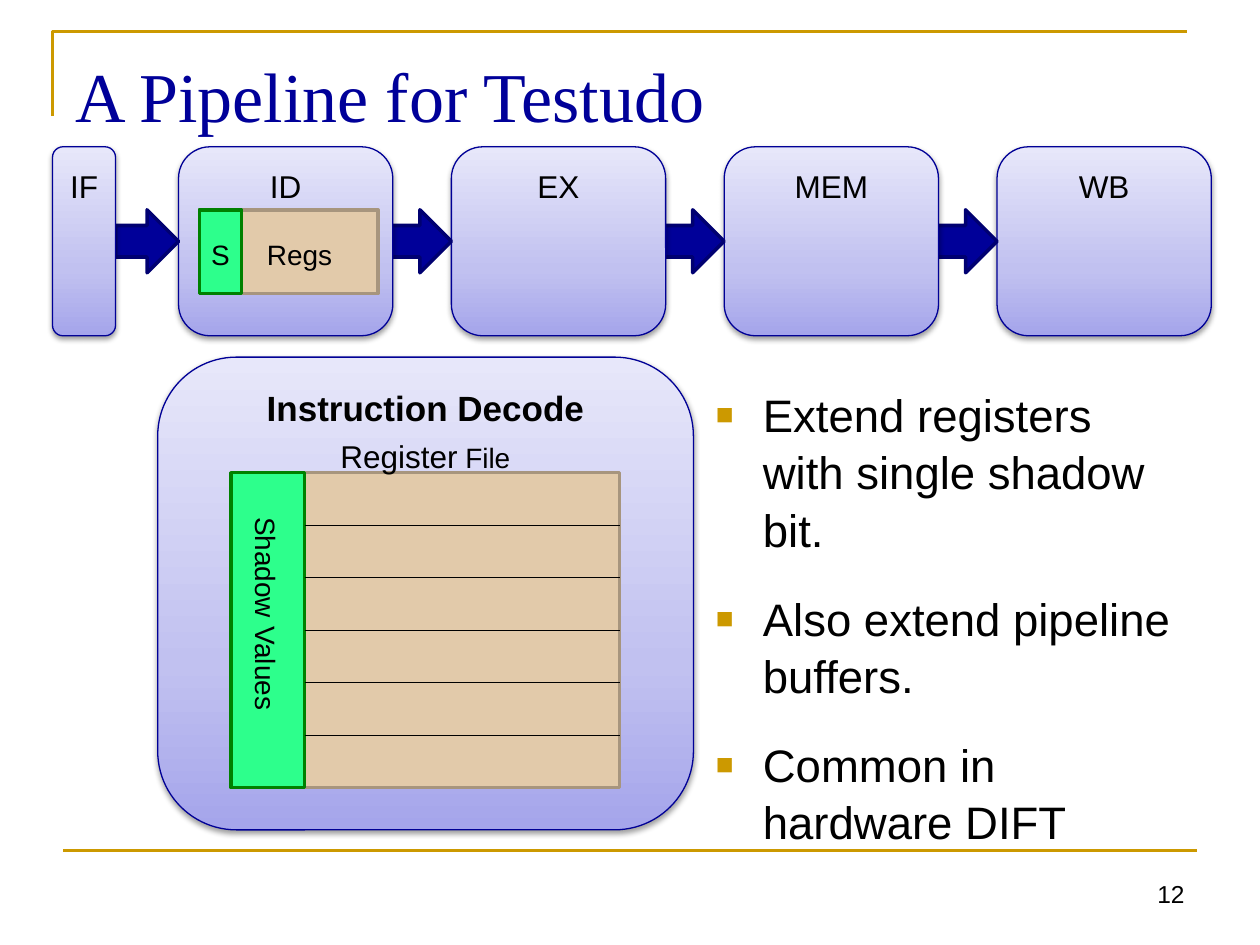
from dataclasses import dataclass

from lxml import etree
from pptx import Presentation
from pptx.dml.color import RGBColor
from pptx.enum import shapes, text
from pptx.oxml import parse_xml
from pptx.oxml.ns import nsdecls, qn
from pptx.util import Cm, Pt

KIND = shapes.MSO_SHAPE
ALIGN = text.PP_ALIGN
ANCHOR = text.MSO_ANCHOR


@dataclass(frozen=True)
class Theme:
    ink: str = "000000"
    navy: str = "000099"
    edge: str = "000096"
    deep: str = "000071"
    gold: str = "CC9900"
    tan: str = "E2CAAA"
    brown: str = "A7957E"
    mint: str = "2DFF8C"
    green: str = "008000"
    fade: tuple = ((0, "A5A5EB"), (35, "C1C1F0"), (100, "E7E7FA"))
    sans: str = "Arial"
    serif: str = "Times New Roman"
    title: int = 40
    body: int = 26
    head: int = 20
    label: int = 18
    small: int = 16
    page: int = 14


class Deck:
    def __init__(self, theme):
        self.t = theme
        self.prs = Presentation()
        self.prs.slide_width, self.prs.slide_height = Cm(25.4), Cm(19.05)
        self.slide = self.prs.slides.add_slide(self.prs.slide_layouts[6])
        self.shapes = self.slide.shapes

    def font(self, para, size, color=None, name=None, bold=False):
        f = para.font
        f.size, f.name, f.bold = Pt(size), name or self.t.sans, bold
        f.color.rgb = RGBColor.from_string(color or self.t.ink)

    def line(self, x1, y1, x2, y2, color, width):
        c = self.shapes.add_connector(
            shapes.MSO_CONNECTOR.STRAIGHT, Cm(x1), Cm(y1), Cm(x2), Cm(y2))
        c.line.color.rgb = RGBColor.from_string(color)
        c.line.width = Pt(width)
        etree.SubElement(c._element.spPr, qn("a:effectLst"))

    def corner(self, x, y, w, h):
        """Open angle that frames the title from the top left."""
        b = self.shapes.build_freeform(Cm(x), Cm(y + h))
        b.add_line_segments([(Cm(x), Cm(y)), (Cm(x + w), Cm(y))], close=False)
        s = b.convert_to_shape()
        s.shadow.inherit = False
        s.fill.background()
        s.line.color.rgb = RGBColor.from_string(self.t.gold)
        s.line.width = Pt(1.5)

    def shape(self, kind, x, y, w, h, fill, edge, width=2):
        s = self.shapes.add_shape(kind, Cm(x), Cm(y), Cm(w), Cm(h))
        s.shadow.inherit = False
        if fill:
            s.fill.solid()
            s.fill.fore_color.rgb = RGBColor.from_string(fill)
        s.line.color.rgb = RGBColor.from_string(edge)
        s.line.width = Pt(width)
        return s

    def stage(self, x, y, w, h, name, size, drop, bold=False):
        """Shaded round box; its name sits `drop` below the top edge."""
        s = self.shape(KIND.ROUNDED_RECTANGLE, x, y, w, h, None, self.t.edge, 0.75)
        stops = "".join(f'<a:gs pos="{p * 1000}"><a:srgbClr val="{c}"/></a:gs>'
                        for p, c in self.t.fade)
        pr = s._element.spPr
        pr.find(qn("a:prstGeom")).addnext(parse_xml(
            f'<a:gradFill {nsdecls("a")} rotWithShape="1"><a:gsLst>{stops}</a:gsLst>'
            '<a:lin ang="16200000" scaled="0"/></a:gradFill>'))
        pr.find(qn("a:effectLst")).append(parse_xml(
            f'<a:outerShdw {nsdecls("a")} blurRad="40000" dist="20000" dir="5400000"'
            ' rotWithShape="0"><a:srgbClr val="000000"><a:alpha val="38000"/>'
            '</a:srgbClr></a:outerShdw>'))
        tf = s.text_frame
        tf.vertical_anchor = ANCHOR.TOP
        tf.margin_left = tf.margin_right = tf.margin_bottom = 0
        # A round box already insets its text by 0.29 of the corner radius.
        tf.margin_top = Cm(drop - 0.29 * min(w, h) / 6)
        para = tf.paragraphs[0]
        para.text, para.alignment = name, ALIGN.CENTER
        self.font(para, size, bold=bold)

    def frame(self, x, y, w, h, anchor=ANCHOR.TOP):
        s = self.shapes.add_textbox(Cm(x), Cm(y), Cm(w), Cm(h))
        tf = s.text_frame
        tf.word_wrap, tf.vertical_anchor = True, anchor
        tf.margin_left = tf.margin_right = tf.margin_top = tf.margin_bottom = 0
        return s

    def note(self, x, y, w, h, words, size, align, color=None, name=None):
        para = self.frame(x, y, w, h).text_frame.paragraphs[0]
        para.text, para.alignment = words, align
        self.font(para, size, color, name)

    def label(self, x, y, w, h, runs, turn=0):
        s = self.frame(x, y, w, h, ANCHOR.MIDDLE)
        s.rotation = turn
        para = s.text_frame.paragraphs[0]
        para.alignment = ALIGN.CENTER
        self.font(para, runs[0][1])
        for words, size in runs:
            r = para.add_run()
            r.text, r.font.size = words, Pt(size)

    def regs(self, x, y, w, h, side):
        """Register block with a shadow strip of width `side` at its left."""
        self.shape(KIND.RECTANGLE, x, y, w, h, self.t.tan, self.t.brown)
        self.shape(KIND.RECTANGLE, x, y, side, h, self.t.mint, self.t.green)

    def bullets(self, x, y, w, h, items):
        tf = self.frame(x, y, w, h).text_frame
        for i, words in enumerate(items):
            para = tf.add_paragraph() if i else tf.paragraphs[0]
            para.text, para.line_spacing = words, 1.05
            if i:
                para.space_before = Pt(18)
            pr = para._p.get_or_add_pPr()
            pr.set("marL", str(Cm(0.95)))
            pr.set("indent", str(-Cm(0.95)))
            color = etree.SubElement(pr, qn("a:buClr"))
            etree.SubElement(color, qn("a:srgbClr"), val=self.t.gold)
            etree.SubElement(pr, qn("a:buSzPct"), val="65000")
            etree.SubElement(pr, qn("a:buFont"), typeface=self.t.sans)
            etree.SubElement(pr, qn("a:buChar"), char="■")
            self.font(para, self.t.body)


def main():
    t = Theme()
    d = Deck(t)

    d.corner(1.06, 0.64, 22.86, 1.7)
    d.line(1.27, 17.15, 24.13, 17.15, t.gold, 1.5)
    d.note(1.52, 1.06, 22.4, 1.6, "A Pipeline for Testudo", t.title,
           ALIGN.LEFT, t.navy, t.serif)
    d.note(18.2, 17.72, 5.68, 0.8, "12", t.page, ALIGN.RIGHT)

    top, tall, left, pitch, arrow = 2.96, 3.81, 3.6, 5.5, 1.27
    for i, name in reversed(list(enumerate(["ID", "EX", "MEM", "WB"]))):
        x = left + i * pitch
        d.stage(x, top, 4.32, tall, name, t.label, 0.41)
        d.shape(KIND.RIGHT_ARROW, x - arrow, top + arrow, arrow, arrow,
                t.navy, t.deep)
    d.stage(1.06, top, 1.27, tall, "IF", t.label, 0.41)

    x, y, w, h, side = 4.02, 4.23, 3.6, 1.69, 0.85
    d.regs(x, y, w, h, side)
    d.label(x, y + 0.05, side, h, [("S", t.small)])
    d.label(x + side, y + 0.05, 2.34, h, [("Regs", t.small)])

    d.stage(3.18, 7.2, 10.8, 9.53, "Instruction Decode", t.head, 0.58, True)
    x, y, w, h, side, rows = 4.66, 9.53, 7.83, 6.35, 1.48, 6
    d.regs(x, y, w, h, side)
    d.label(x, 8.69, w, 1.02, [("Register", t.label), (" File", t.small)])
    d.label(2.74, 11.86, 5.31, 1.02,
            [("Shadow", t.small), (" ", t.label), ("Values", t.small)], 90)
    for i in range(1, rows):
        row = y + i * h / rows
        d.line(x + side, row, x + w, row, t.ink, 0.75)

    d.bullets(14.43, 7.75, 9.45, 9.2, [
        "Extend registers with single shadow bit.",
        "Also extend pipeline buffers.",
        "Common in hardware DIFT"])

    d.prs.save("out.pptx")


if __name__ == "__main__":
    main()
